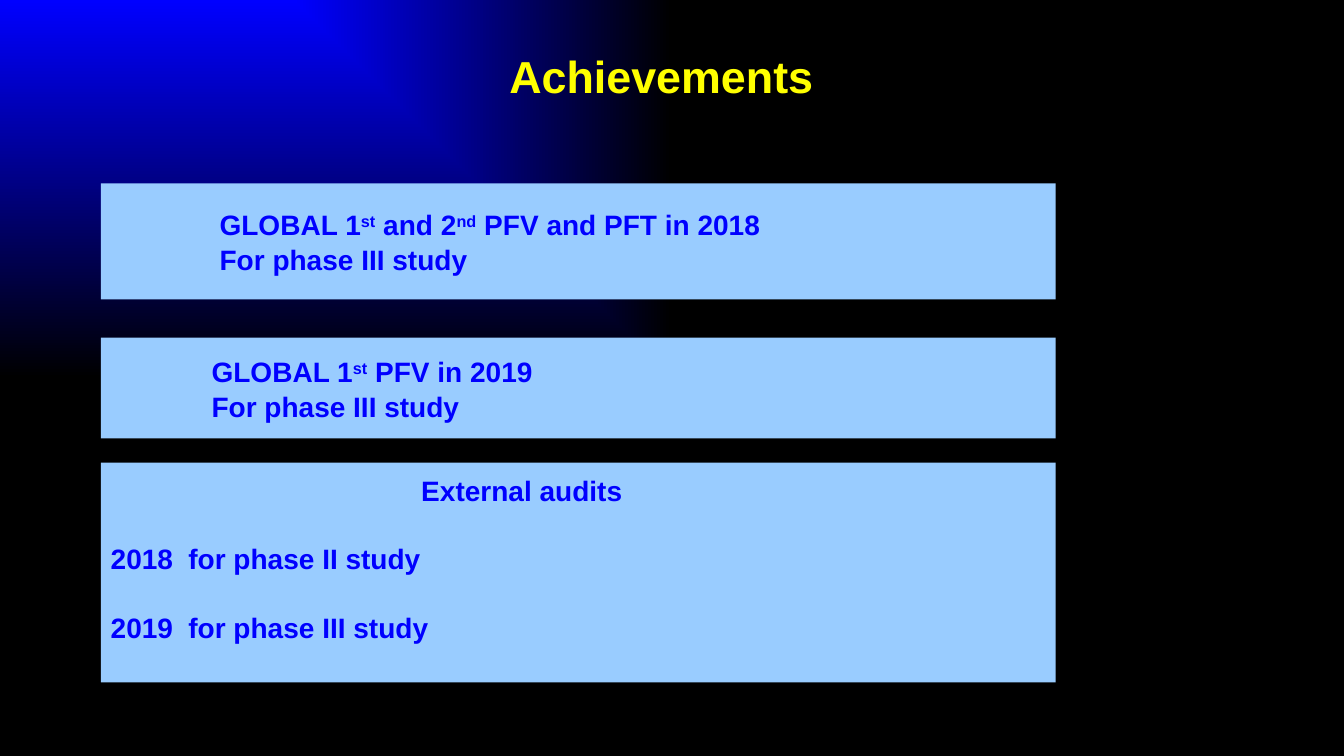
from lxml import etree
from pptx import Presentation
from pptx.dml.color import RGBColor
from pptx.enum.shapes import MSO_SHAPE
from pptx.enum.text import MSO_ANCHOR, PP_ALIGN
from pptx.oxml.ns import qn
from pptx.util import Inches, Pt

RECT = MSO_SHAPE.RECTANGLE
TOP, MIDDLE = MSO_ANCHOR.TOP, MSO_ANCHOR.MIDDLE
LEFT, CENTER = PP_ALIGN.LEFT, PP_ALIGN.CENTER
COLORS = {"blue": "0000FF", "black": "000000", "title": "FFFF00", "box": "99CCFF"}
FONT = "Arial"
BOX_LEFT, BOX_WIDTH = 1, 9.47


def rgb(name):
    """Return the named palette colour."""
    return RGBColor.from_string(COLORS[name])


def style_run(r, size, color):
    """Format a run in the bold slide font."""
    r.font.name, r.font.size, r.font.bold = FONT, Pt(size), True
    r.font.color.rgb = rgb(color)


def set_background(s):
    """Fade the background from blue at the top left corner to black."""
    fill = s.background.fill
    fill.gradient()
    for stop, position, color in zip(fill.gradient_stops, (0, 1), ("blue", "black")):
        stop.position = position
        stop.color.rgb = rgb(color)
    grad = s._element.find(".//" + qn("a:gradFill"))
    grad.remove(grad.find(qn("a:lin")))
    path = etree.SubElement(grad, qn("a:path"), {"path": "rect"})
    etree.SubElement(path, qn("a:fillToRect"), {"r": "100000", "b": "100000"})


def set_title(s, text):
    """Place and format the slide title."""
    sp = s.shapes.title
    sp.left, sp.top, sp.width, sp.height = map(Inches, (0.78, 0.33, 11.56, 0.93))
    tf = sp.text_frame
    tf.text = text
    tf.vertical_anchor = MIDDLE
    tf.margin_left = tf.margin_right = tf.margin_top = tf.margin_bottom = 0
    p = tf.paragraphs[0]
    p.alignment, p.line_spacing = CENTER, 0.85
    style_run(p.runs[0], 32, "title")


def write_line(p, text, margin, hanging=0, before=0):
    """Write an indented line, raising the parts between carets."""
    p.alignment, p.line_spacing, p.space_before = LEFT, 1.04, Pt(before)
    pPr = p._p.get_or_add_pPr()
    pPr.set("marL", str(Inches(margin)))
    pPr.set("indent", str(-Inches(hanging)))
    for i, part in enumerate(text.split("^")):
        r = p.add_run()
        r.text = part
        style_run(r, 20, "blue")
        if i % 2:
            r._r.get_or_add_rPr().set("baseline", "30000")


def add_box(s, top, height, lines, anchor=MIDDLE, inset=0.05):
    """Add a light blue box holding lines of text."""
    sp = s.shapes.add_shape(RECT, Inches(BOX_LEFT), Inches(top), Inches(BOX_WIDTH), Inches(height))
    sp.shadow.inherit = False
    sp.fill.solid()
    sp.fill.fore_color.rgb = rgb("box")
    sp.line.fill.background()
    tf = sp.text_frame
    tf.word_wrap = True
    tf.vertical_anchor = anchor
    tf.margin_top = Inches(inset)
    for i, line in enumerate(lines):
        p = tf.add_paragraph() if i else tf.paragraphs[0]
        write_line(p, *line)


def main():
    """Build the achievements slide."""
    prs = Presentation()
    prs.slide_width, prs.slide_height = Inches(13.33), Inches(7.5)
    s = prs.slides.add_slide(prs.slide_layouts[5])
    set_background(s)
    set_title(s, "Achievements")
    add_box(s, 1.82, 1.15, [
        ("GLOBAL 1^st^ and 2^nd^ PFV and PFT in 2018", 1.08),
        ("For phase III study", 1.08),
    ])
    add_box(s, 3.35, 1, [
        ("GLOBAL 1^st^ PFV in 2019", 1),
        ("For phase III study", 1),
    ])
    add_box(s, 4.59, 2.18, [
        ("External audits", 3.08),
        ("2018\tfor phase II study", 0.77, 0.77, 24),
        ("2019\tfor phase III study", 0.77, 0.77, 24),
    ], TOP, 0.09)
    prs.save("out.pptx")


if __name__ == "__main__":
    main()
